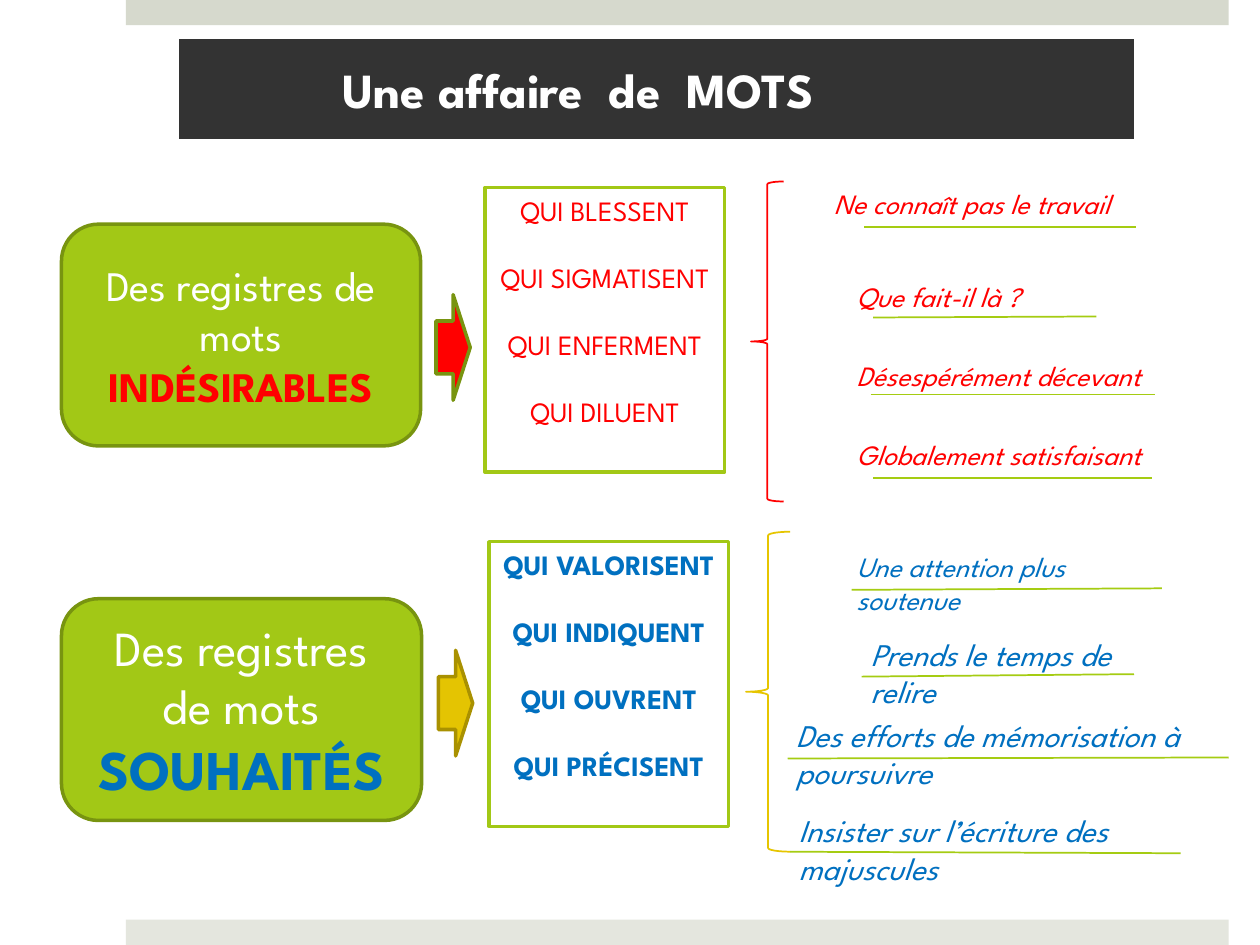
from lxml import etree
from pptx import Presentation
from pptx.dml.color import RGBColor
from pptx.enum.shapes import MSO_CONNECTOR, MSO_SHAPE as SHAPE
from pptx.enum.text import MSO_ANCHOR as ANCHOR, MSO_AUTO_SIZE, PP_ALIGN as ALIGN
from pptx.oxml.ns import qn
from pptx.util import Cm, Pt

WHITE = RGBColor(0xFF, 0xFF, 0xFF)
DARK = RGBColor(0x33, 0x33, 0x33)
TOP_GREY = RGBColor(0xD6, 0xD9, 0xCD)
BOTTOM_GREY = RGBColor(0xE4, 0xE6, 0xDE)
GREEN = RGBColor(0xA2, 0xC8, 0x16)
DARK_GREEN = RGBColor(0x78, 0x94, 0x10)
RULE_GREEN = RGBColor(0xA5, 0xCC, 0x12)
RED = RGBColor(0xFF, 0x00, 0x00)
BLUE = RGBColor(0x00, 0x70, 0xC0)
YELLOW = RGBColor(0xE4, 0xC4, 0x02)
DARK_YELLOW = RGBColor(0xA9, 0x91, 0x01)
BRACE_YELLOW = RGBColor(0xE6, 0xC5, 0x00)


class Board:
    """Holds the slide and its style; positions are in centimetres."""
    font = "League Spartan"

    def __init__(self, slide):
        self.slide = slide

    def style(self, p, size, color, bold=None, italic=None):
        for r in p.runs:
            f = r.font
            f.name, f.size, f.bold, f.italic = self.font, Pt(size), bold, italic
            f.color.rgb = color

    def shape(self, kind, box, fill=None, line=None, width=2):
        sp = self.slide.shapes.add_shape(kind, *map(Cm, box))
        sp.shadow.inherit = False
        if fill is None:
            sp.fill.background()
        else:
            sp.fill.solid()
            sp.fill.fore_color.rgb = fill
        if line is None:
            sp.line.fill.background()
        else:
            sp.line.color.rgb = line
            sp.line.width = Pt(width)
        return sp

    def title(self, text, box):
        sp = self.slide.shapes.title
        sp.left, sp.top, sp.width, sp.height = map(Cm, box)
        sp.fill.solid()
        sp.fill.fore_color.rgb = DARK
        tf = sp.text_frame
        tf.text = text
        tf.auto_size = MSO_AUTO_SIZE.NONE
        tf.vertical_anchor = ANCHOR.MIDDLE
        tf.margin_left, tf.margin_right = Cm(3.3), Cm(0.76)
        p = tf.paragraphs[0]
        p.alignment = ALIGN.LEFT
        self.style(p, 28, WHITE, bold=True)

    def card(self, lead, keyword, box, size, key_size, key_color):
        tf = self.shape(SHAPE.ROUNDED_RECTANGLE, box, GREEN, DARK_GREEN).text_frame
        tf.word_wrap = True
        tf.vertical_anchor = ANCHOR.MIDDLE
        tf.text = lead
        p = tf.paragraphs[0]
        p.alignment = ALIGN.CENTER
        self.style(p, size, WHITE)
        r = p.add_run()
        r.text = keyword
        r.font.name, r.font.size, r.font.bold = self.font, Pt(key_size), True
        r.font.color.rgb = key_color

    def word_list(self, words, box, color, bold):
        tf = self.shape(SHAPE.RECTANGLE, box, WHITE, GREEN).text_frame
        tf.word_wrap = True
        tf.vertical_anchor = ANCHOR.TOP
        tf.text = "\n".join(words)
        for p in tf.paragraphs:
            p.alignment = ALIGN.CENTER
            p.space_after = Pt(19)
            self.style(p, 16, color, bold=bold)

    def rule(self, x1, y1, x2, y2):
        ln = self.slide.shapes.add_connector(
            MSO_CONNECTOR.STRAIGHT, *map(Cm, (x1, y1, x2, y2)))
        ln.line.color.rgb = RULE_GREEN
        ln.line.width = Pt(1)
        etree.SubElement(ln._element.spPr, qn("a:effectLst"))

    def remark(self, text, box, size, color):
        tf = self.slide.shapes.add_textbox(*map(Cm, box)).text_frame
        tf.word_wrap = True
        tf.text = text
        self.style(tf.paragraphs[0], size, color, italic=True)


def main():
    prs = Presentation()
    prs.slide_width, prs.slide_height = Cm(25.4), Cm(19.05)
    board = Board(prs.slides.add_slide(prs.slide_layouts[5]))

    # Bands and title
    for top, grey in ((0, TOP_GREY), (18.54, BOTTOM_GREY)):
        board.shape(SHAPE.RECTANGLE, (2.54, top, 22.23, 0.51), grey)
    board.title("Une affaire  de  MOTS", (3.61, 0.79, 19.25, 2.01))

    # Unwanted words
    board.card("Des registres de mots ", "INDÉSIRABLES",
               (1.24, 4.52, 7.24, 4.47), 24, 24, RED)
    board.word_list(("QUI BLESSENT", "QUI SIGMATISENT", "QUI ENFERMENT", "QUI DILUENT"),
                    (9.78, 3.78, 4.83, 5.74), RED, False)
    board.shape(SHAPE.RIGHT_ARROW, (8.79, 5.94, 0.69, 2.13), RED, DARK_GREEN)
    board.shape(SHAPE.LEFT_BRACE, (15.14, 3.66, 0.66, 6.45), line=RED, width=1)

    # Wanted words
    board.card("Des registres de mots ", "SOUHAITÉS",
               (1.24, 12.07, 7.26, 4.47), 28, 32, BLUE)
    board.word_list(("QUI VALORISENT", "QUI INDIQUENT", "QUI OUVRENT", "QUI PRÉCISENT"),
                    (9.86, 10.92, 4.83, 5.74), BLUE, True)
    board.shape(SHAPE.RIGHT_ARROW, (8.84, 13.11, 0.69, 2.13), YELLOW, DARK_YELLOW)
    board.shape(SHAPE.LEFT_BRACE, (15.04, 10.72, 0.89, 6.45), line=BRACE_YELLOW, width=1)

    # Example remarks: text, box, size, colour, rule
    remarks = (
        ("Ne connaît pas le travail", (16.56, 3.63, 7.59, 0.94), 16, RED,
         (17.42, 4.57, 22.91, 4.57)),
        ("Que fait-il là ?", (17.02, 5.51, 6.02, 0.94), 16, RED,
         (17.6, 6.4, 22.1, 6.38)),
        ("Désespérément décevant", (17.02, 7.11, 6.93, 1.63), 16, RED,
         (17.55, 7.95, 23.29, 7.95)),
        ("Globalement satisfaisant", (17.02, 8.69, 6.68, 1.63), 16, RED,
         (17.6, 9.63, 23.22, 9.63)),
        ("Une attention plus soutenue", (17.02, 10.95, 6.5, 1.63), 16, BLUE,
         (17.17, 11.89, 23.42, 11.86)),
        ("Prends le temps de relire", (17.3, 12.67, 5.92, 1.8), 18, BLUE,
         (17.37, 13.64, 22.86, 13.59)),
        ("Des efforts de mémorisation à poursuivre", (15.8, 14.3, 9.6, 1.8), 18, BLUE,
         (15.88, 15.29, 24.77, 15.27)),
        ("Insister sur l’écriture des majuscules", (15.85, 16.23, 8.31, 1.8), 18, BLUE,
         (15.93, 17.17, 23.8, 17.2)),
    )
    for text, box, size, color, rule in remarks:
        board.rule(*rule)
        board.remark(text, box, size, color)

    prs.save("out.pptx")


if __name__ == "__main__":
    main()
